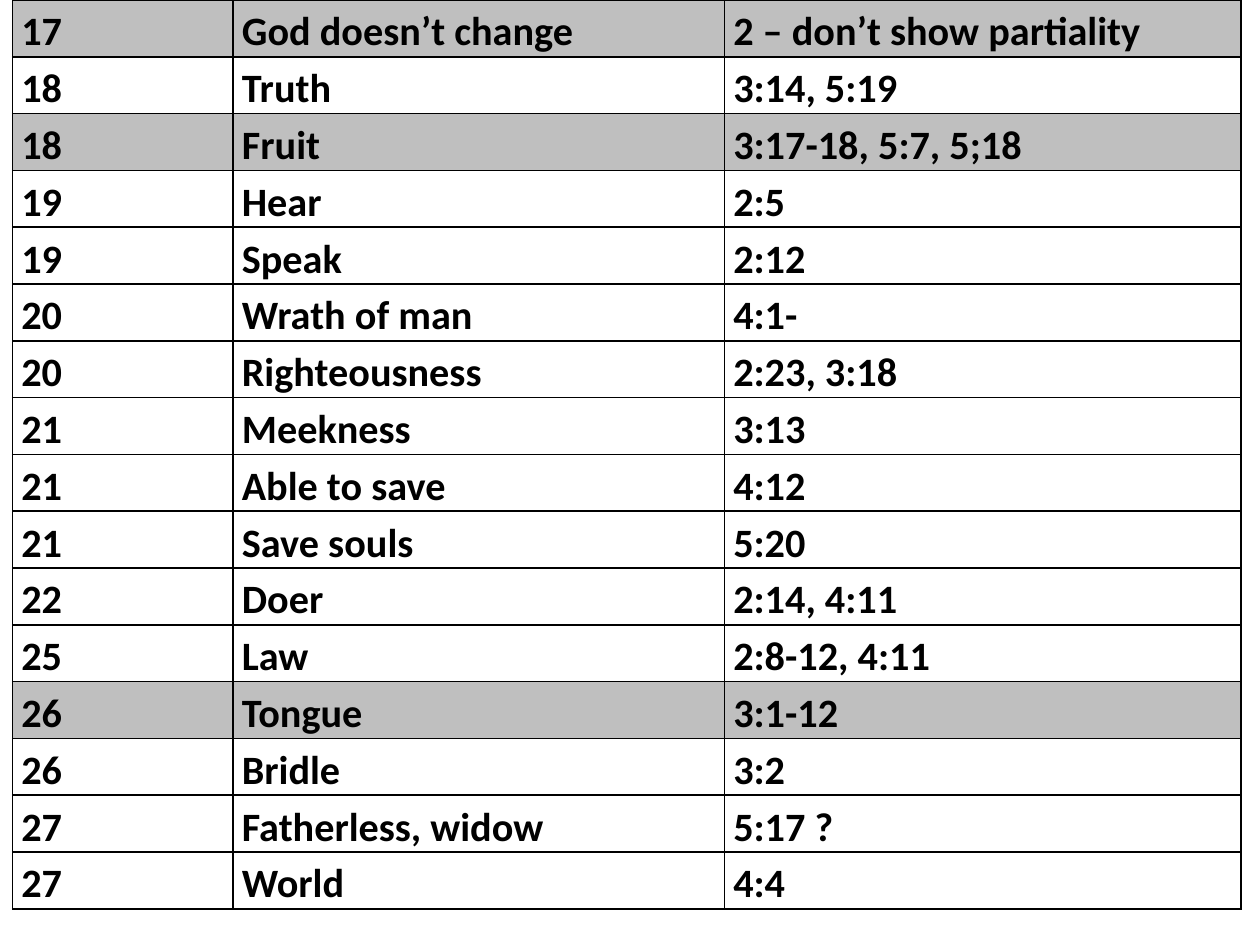
from pptx import Presentation
from pptx.dml.color import RGBColor
from pptx.oxml import parse_xml
from pptx.oxml.ns import nsdecls
from pptx.util import Inches, Pt

COLS = [1.75, 3.9, 4.1]
ROW_H = 0.45
BLACK, GREY = "000000", "BFBFBF"
SHADED = {"God doesn’t change", "Fruit", "Tongue"}
VERSES = [
    ("17", "God doesn’t change", "2 – don’t show partiality"),
    ("18", "Truth", "3:14, 5:19"),
    ("18", "Fruit", "3:17-18, 5:7, 5;18"),
    ("19", "Hear", "2:5"),
    ("19", "Speak", "2:12"),
    ("20", "Wrath of man", "4:1-"),
    ("20", "Righteousness", "2:23, 3:18"),
    ("21", "Meekness", "3:13"),
    ("21", "Able to save", "4:12"),
    ("21", "Save souls", "5:20"),
    ("22", "Doer", "2:14, 4:11"),
    ("25", "Law", "2:8-12, 4:11"),
    ("26", "Tongue", "3:1-12"),
    ("26", "Bridle", "3:2"),
    ("27", "Fatherless, widow", "5:17 ?"),
    ("27", "World", "4:4"),
]


def rgb(color):
    """Turn a hex string into a colour."""
    return RGBColor.from_string(color)


def write(tf, text, size=23, color=BLACK, bold=True, font="Calibri", spacing=1.15):
    """Write one formatted paragraph into a text frame."""
    p = tf.paragraphs[0]
    p.line_spacing = spacing
    r = p.add_run()
    r.text = text
    r.font.name, r.font.size, r.font.bold = font, Pt(size), bold
    r.font.color.rgb = rgb(color)


def set_borders(cell, color=BLACK, width=1):
    """Draw a solid line on all four sides of a cell."""
    tcPr = cell._tc.get_or_add_tcPr()
    for i, side in enumerate(("lnL", "lnR", "lnT", "lnB")):
        tcPr.insert(i, parse_xml(
            f'<a:{side} {nsdecls("a")} w="{Pt(width)}"><a:solidFill>'
            f'<a:srgbClr val="{color}"/></a:solidFill></a:{side}>'))


def format_cell(cell, text, fill=None):
    """Set the margins, fill, borders and text of a cell."""
    cell.margin_left = cell.margin_right = Inches(0.07)
    cell.margin_top = cell.margin_bottom = 0
    if fill:
        cell.fill.solid()
        cell.fill.fore_color.rgb = rgb(fill)
    else:
        cell.fill.background()
    set_borders(cell)
    write(cell.text_frame, text)


def add_verse_table(s, left, top):
    """Add the table of verses, themes and cross references."""
    table = s.shapes.add_table(
        len(VERSES), len(COLS), Inches(left), Inches(top),
        Inches(sum(COLS)), Inches(ROW_H * len(VERSES))).table
    table.first_row = table.horz_banding = False
    for col, width in zip(table.columns, COLS):
        col.width = Inches(width)
    for row, verse in zip(table.rows, VERSES):
        row.height = Inches(ROW_H)
        fill = GREY if verse[1] in SHADED else None
        for cell, text in zip(row.cells, verse):
            format_cell(cell, text, fill)


def main():
    """Build and save the slide."""
    prs = Presentation()
    prs.slide_width, prs.slide_height = Inches(10), Inches(7.5)
    s = prs.slides.add_slide(prs.slide_layouts[6])
    add_verse_table(s, 0.1, 0)
    prs.save("out.pptx")


if __name__ == "__main__":
    main()
